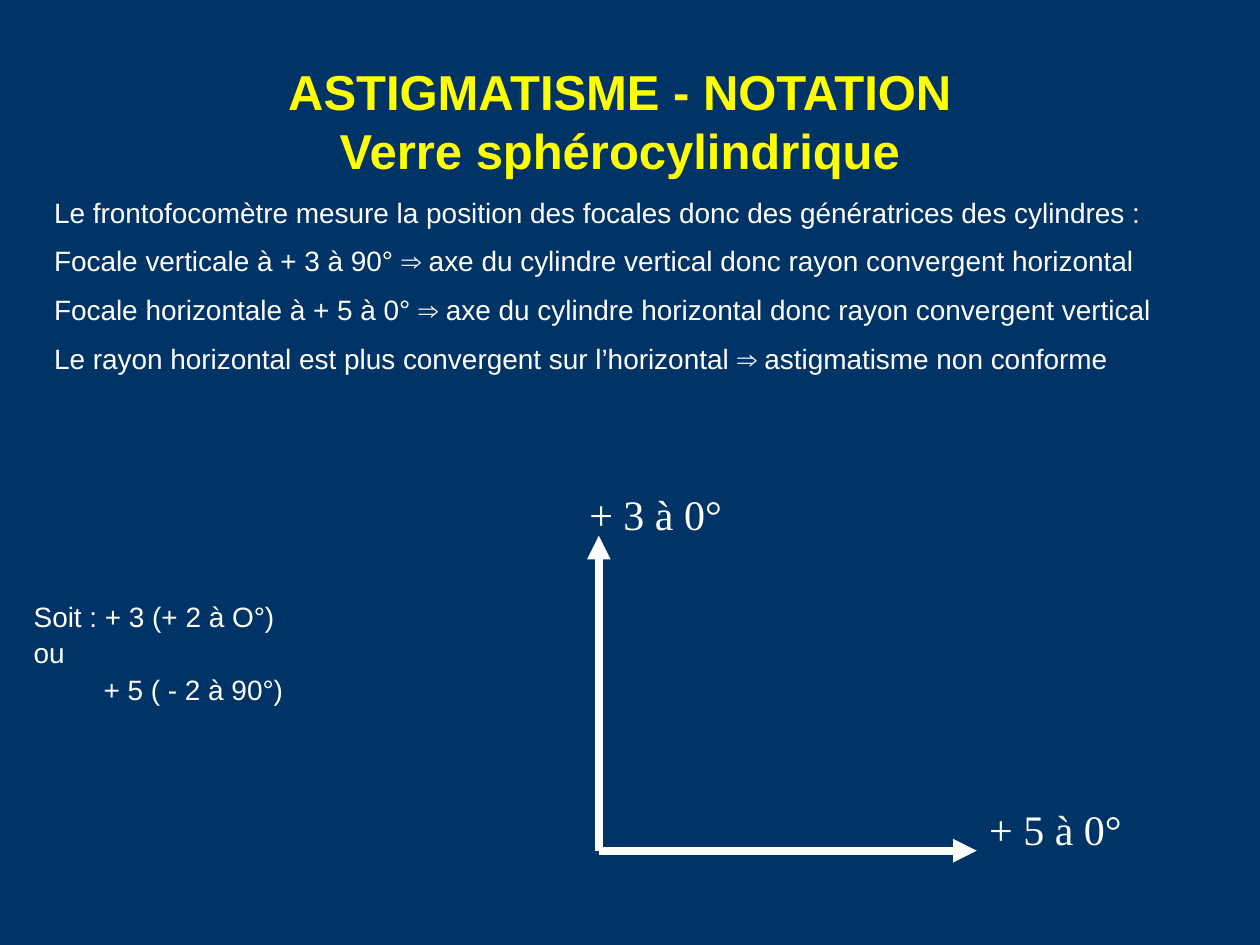
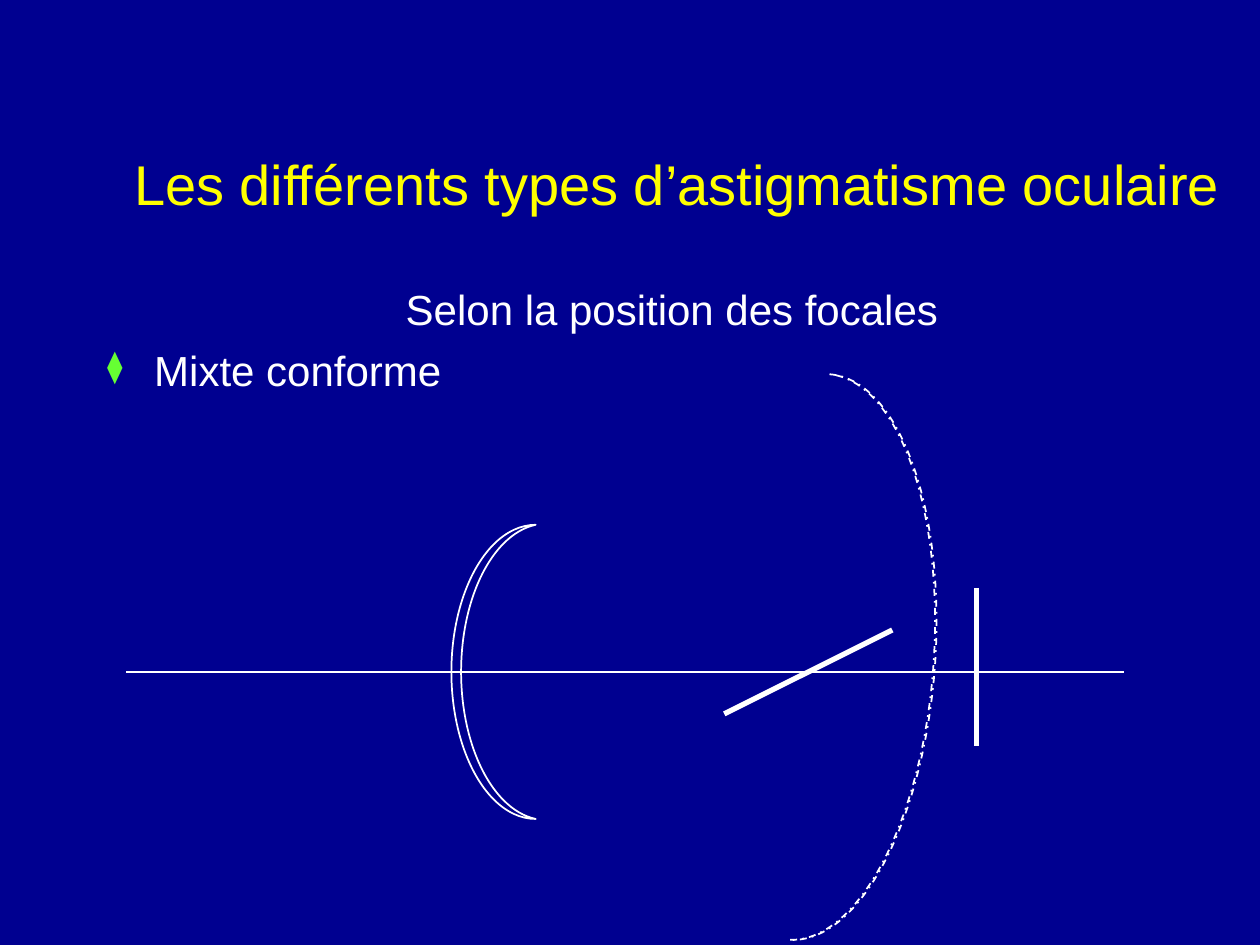
from lxml import etree
from pptx import Presentation
from pptx.dml.color import RGBColor
from pptx.enum.dml import MSO_LINE
from pptx.enum.shapes import MSO_CONNECTOR, MSO_SHAPE
from pptx.enum.text import MSO_ANCHOR, MSO_AUTO_SIZE, PP_ALIGN
from pptx.oxml.ns import qn
from pptx.util import Cm, Pt

LEFT, CENTER = PP_ALIGN.LEFT, PP_ALIGN.CENTER
MIDDLE, FIXED = MSO_ANCHOR.MIDDLE, MSO_AUTO_SIZE.NONE
STRAIGHT, MOON, DASH = MSO_CONNECTOR.STRAIGHT, MSO_SHAPE.MOON, MSO_LINE.DASH_DOT
SANS, SERIF = "Arial", "Times New Roman"
HEX = {"teal": "003366", "navy": "000090", "gold": "FFFF00",
       "white": "FFFFFF", "green": "66FF33"}
HANG = 0.95

NOTATION = {
    "back": "teal",
    "title": ("ASTIGMATISME - NOTATION\vVerre sphérocylindrique",
              (1.7, 0.84, 21.59, 3.18), 28, True),
    "texts": [
        {"box": (0.84, 3.81, 23.7, 5), "size": 16, "gap": 8.7, "lines": [
            "Le frontofocomètre mesure la position des focales donc des génératrices des cylindres :",
            "Focale verticale à + 3 à 90° ⇒ axe du cylindre vertical donc rayon convergent horizontal",
            "Focale horizontale à + 5 à 0° ⇒ axe du cylindre horizontal donc rayon convergent vertical",
            "Le rayon horizontal est plus convergent sur l’horizontal ⇒ astigmatisme non conforme"]},
        {"box": (0.43, 12.03, 11.23, 1.94), "size": 16, "gap": 3.7, "pitch": 0.9,
         "lines": ["Soit : + 3 (+ 2 à O°)", "ou", ("+ 5 ( - 2 à 90°)", {"pad": 1.41})]},
        {"box": (19.69, 16.08, 5.08, 1.27), "size": 24, "font": SERIF,
         "lines": ["+ 5 à 0°"]},
        {"box": (11.63, 9.73, 5.08, 1.27), "size": 24, "font": SERIF,
         "lines": ["+ 3 à 0°"]},
    ],
    "rules": [(12.07, 17.15, 19.69, 17.15, 4.5, True),
              (12.07, 17.15, 12.07, 10.8, 4.5, True)],
    "moons": [],
}
TYPES = {
    "back": "navy",
    "title": ("Les différents types d’astigmatisme oculaire",
              (1.91, 2.11, 23.49, 3.18), 32, False),
    "texts": [
        {"box": (1.91, 5.59, 23.27, 4.37), "size": 24, "gap": 6, "lines": [
            ("Selon la position des focales", {"align": CENTER}),
            ("Mixte conforme", {"mark": "⧫"})]},
    ],
    "rules": [(2.54, 13.55, 22.66, 13.55, 1, False),
              (17.99, 12.7, 14.6, 14.39, 3, False),
              (19.69, 11.85, 19.69, 15.04, 3, False)],
    "moons": [((9.1, 10.58, 1.7, 5.93), 0.115, 0, None),
              ((16.31, 7.62, 2.54, 11.43), 0.012, 184.1, DASH)],
}


def tint(name):
    return RGBColor.from_string(HEX[name])


def style(para, size, name, face=SANS, bold=False):
    font = para.font
    font.name, font.size, font.bold = face, Pt(size), bold
    font.color.rgb = tint(name)


def bullet(para, mark):
    props = para._p.get_or_add_pPr()
    props.set("marL", str(Cm(HANG)))
    props.set("indent", str(-Cm(HANG)))
    hue = etree.SubElement(props, qn("a:buClr"))
    etree.SubElement(hue, qn("a:srgbClr"), val=HEX["green"])
    etree.SubElement(props, qn("a:buSzPct"), val="75000")
    etree.SubElement(props, qn("a:buChar"), char=mark)


def add_title(slide, text, box, size, bold):
    head = slide.shapes.title
    head.left, head.top, head.width, head.height = map(Cm, box)
    frame = head.text_frame
    frame.text = text
    frame.auto_size, frame.vertical_anchor = FIXED, MIDDLE
    para = frame.paragraphs[0]
    para.alignment = CENTER
    style(para, size, "gold", bold=bold)


def add_text(slide, box, size, lines, gap=0, pitch=1.0, font=SANS):
    frame = slide.shapes.add_textbox(*map(Cm, box)).text_frame
    frame.word_wrap = True
    for i, line in enumerate(lines):
        text, opts = (line, {}) if isinstance(line, str) else line
        para = frame.add_paragraph() if i else frame.paragraphs[0]
        para.text = text
        if "mark" in opts:
            bullet(para, opts["mark"])
        if "pad" in opts:
            para._p.get_or_add_pPr().set("marL", str(Cm(opts["pad"])))
        para.alignment = opts.get("align", LEFT)
        para.line_spacing = pitch
        if i:
            para.space_before = Pt(gap)
        style(para, size, "white", font)


def add_rule(slide, x1, y1, x2, y2, width, arrow):
    rule = slide.shapes.add_connector(STRAIGHT, *map(Cm, (x1, y1, x2, y2)))
    rule.line.color.rgb = tint("white")
    rule.line.width = Pt(width)
    if arrow:
        etree.SubElement(rule.line._get_or_add_ln(), qn("a:tailEnd"), type="triangle")
    etree.SubElement(rule._element.spPr, qn("a:effectLst"))


def add_moon(slide, box, bulge, turn, dash):
    moon = slide.shapes.add_shape(MOON, *map(Cm, box))
    moon.shadow.inherit = False
    moon.adjustments[0] = bulge
    moon.rotation = turn
    moon.fill.background()
    moon.line.color.rgb = tint("white")
    moon.line.width = Pt(1)
    if dash:
        moon.line.dash_style = dash


def main():
    deck = Presentation()
    deck.slide_width, deck.slide_height = Cm(25.4), Cm(19.05)
    for page in (NOTATION, TYPES):
        slide = deck.slides.add_slide(deck.slide_layouts[5])
        fill = slide.background.fill
        fill.solid()
        fill.fore_color.rgb = tint(page["back"])
        add_title(slide, *page["title"])
        for text in page["texts"]:
            add_text(slide, **text)
        for rule in page["rules"]:
            add_rule(slide, *rule)
        for moon in page["moons"]:
            add_moon(slide, *moon)
    deck.save("out.pptx")


if __name__ == "__main__":
    main()
